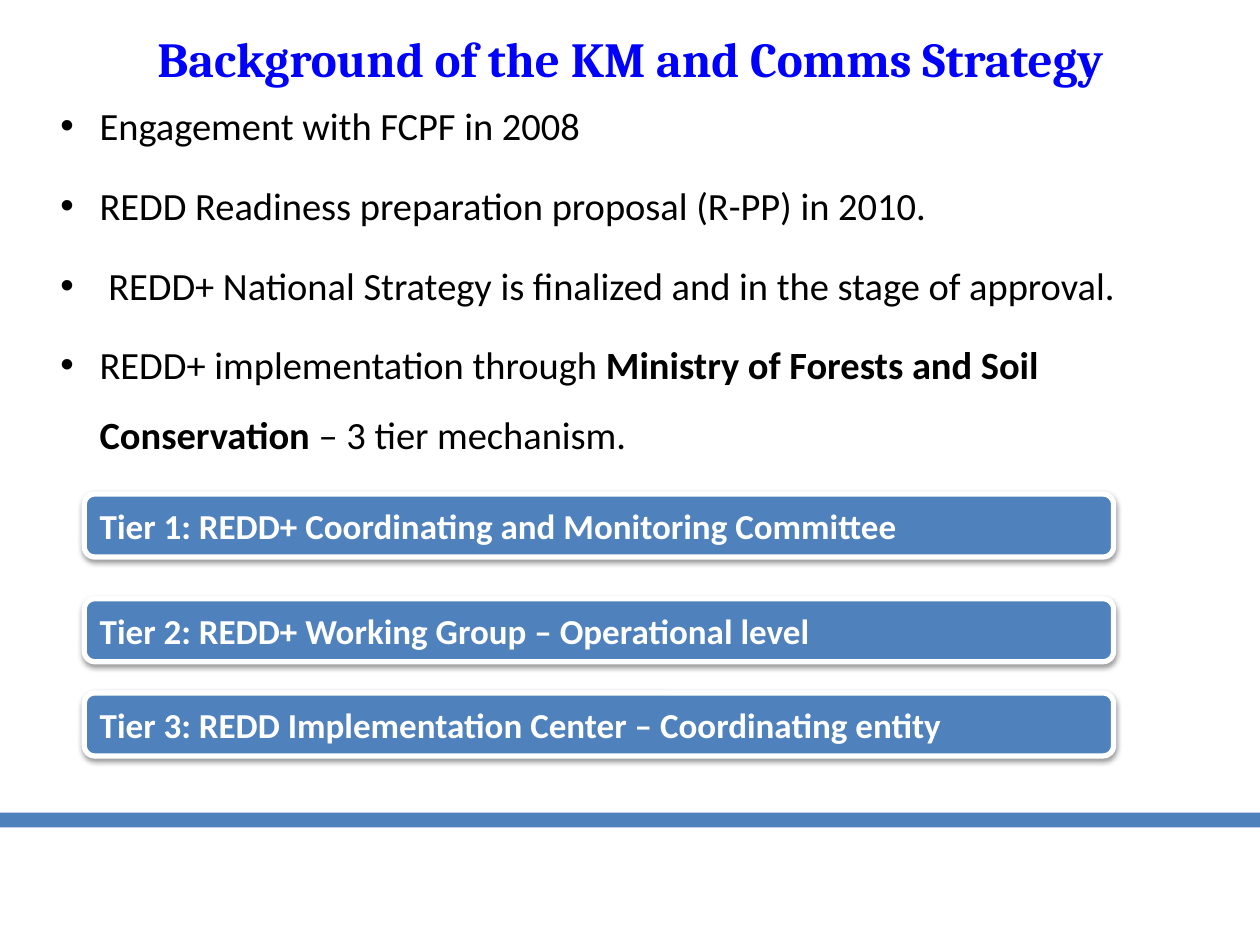
"""Build the slide on the background of the KM and Comms strategy."""
from lxml import etree
from pptx import Presentation
from pptx import util as u
from pptx.dml.color import RGBColor
from pptx.enum import shapes, text
from pptx.oxml import ns

BLUE = RGBColor(0x4F, 0x81, 0xBD)
TITLE_BLUE = RGBColor(0x00, 0x00, 0xFF)
BLACK = RGBColor(0x00, 0x00, 0x00)
WHITE = RGBColor(0xFF, 0xFF, 0xFF)

TITLE = {"name": "Cambria", "size": u.Pt(28), "bold": True, "color": TITLE_BLUE}
BODY = {"name": "Calibri", "size": u.Pt(22), "bold": False, "color": BLACK}
STRONG = {**BODY, "bold": True}
TIER = {"name": "Calibri", "size": u.Pt(20), "bold": True, "color": WHITE}

BULLETS = [
    [("Engagement with FCPF in 2008", BODY)],
    [("REDD Readiness preparation proposal (R-PP) in 2010.", BODY)],
    [(" REDD+ National Strategy is finalized and in the stage of approval.", BODY)],
    [
        ("REDD+ implementation through ", BODY),
        ("Ministry of Forests and Soil Conservation ", STRONG),
        ("– 3 tier mechanism.", BODY),
    ],
]
TIERS = [
    (9.96, "Tier 1: REDD+ Coordinating and Monitoring Committee"),
    (12.07, "Tier 2: REDD+ Working Group – Operational level"),
    (13.97, "Tier 3: REDD Implementation Center – Coordinating entity"),
]


def add_element(parent, tag, **attributes):
    """Append a DrawingML element and return it."""
    return etree.SubElement(parent, ns.qn(tag), attributes)


class SlideBuilder:
    """Hold the style and the current slide."""

    def __init__(self, slide):
        """Keep the slide and the shared look."""
        self.slide = slide
        self.fill = BLUE
        self.indent = u.Cm(0.79)

    def add_runs(self, paragraph, runs):
        """Add formatted runs to a paragraph."""
        for content, style in runs:
            run = paragraph.add_run()
            run.text = content
            for key, value in style.items():
                if key == "color":
                    run.font.color.rgb = value
                else:
                    setattr(run.font, key, value)

    def text_frame(self, box, **settings):
        """Add a wrapping text box and return its frame."""
        frame = self.slide.shapes.add_textbox(*map(u.Cm, box)).text_frame
        for key, value in {"word_wrap": True, **settings}.items():
            setattr(frame, key, value)
        return frame

    def title(self, box, content):
        """Add the centred title."""
        frame = self.text_frame(box, vertical_anchor=text.MSO_ANCHOR.MIDDLE)
        paragraph = frame.paragraphs[0]
        paragraph.alignment = text.PP_ALIGN.CENTER
        self.add_runs(paragraph, [(content, TITLE)])

    def bullets(self, box, items):
        """Add the bulleted list."""
        frame = self.text_frame(box, auto_size=text.MSO_AUTO_SIZE.SHAPE_TO_FIT_TEXT)
        for index, runs in enumerate(items):
            paragraph = frame.add_paragraph() if index else frame.paragraphs[0]
            paragraph.line_spacing = 1.5
            paragraph.space_before = u.Pt(6 if index else 0)
            properties = paragraph._p.get_or_add_pPr()
            properties.set("marL", str(self.indent))
            properties.set("indent", str(-self.indent))
            add_element(properties, "a:buFont", typeface="Arial")
            add_element(properties, "a:buChar", char="•")
            self.add_runs(paragraph, runs)

    def block(self, kind, box):
        """Add a plain filled shape without outline."""
        shape = self.slide.shapes.add_shape(kind, *map(u.Cm, box))
        shape.shadow.inherit = False
        shape.fill.solid()
        shape.fill.fore_color.rgb = self.fill
        shape.line.fill.background()
        return shape

    def tier(self, box, content):
        """Add a rounded tier bar with outline and soft shadow."""
        shape = self.block(shapes.MSO_SHAPE.ROUNDED_RECTANGLE, box)
        shape.line.color.rgb = WHITE
        shape.line.width = u.Pt(3)
        effects = shape._element.spPr.find(ns.qn("a:effectLst"))
        shadow = add_element(effects, "a:outerShdw", blurRad="40000", dist="20000",
                             dir="5400000", rotWithShape="0")
        color = add_element(shadow, "a:srgbClr", val=str(BLACK))
        add_element(color, "a:alpha", val="38000")
        frame = shape.text_frame
        frame.vertical_anchor = text.MSO_ANCHOR.MIDDLE
        frame.paragraphs[0].alignment = text.PP_ALIGN.LEFT
        self.add_runs(frame.paragraphs[0], [(content, TIER)])


def main():
    """Build and save the presentation."""
    presentation = Presentation()
    presentation.slide_width = u.Cm(25.4)
    presentation.slide_height = u.Cm(19.05)
    builder = SlideBuilder(presentation.slides.add_slide(presentation.slide_layouts[6]))
    builder.block(shapes.MSO_SHAPE.RECTANGLE, (0, 16.38, 25.4, 0.3))
    builder.title((0.64, 0, 24.13, 2.34), "Background of the KM and Comms Strategy")
    builder.bullets((0.97, 1.47, 23.7, 7.95), BULLETS)
    for top, content in TIERS:
        builder.tier((1.7, top, 20.75, 1.27), content)
    presentation.save("out.pptx")


if __name__ == "__main__":
    main()
